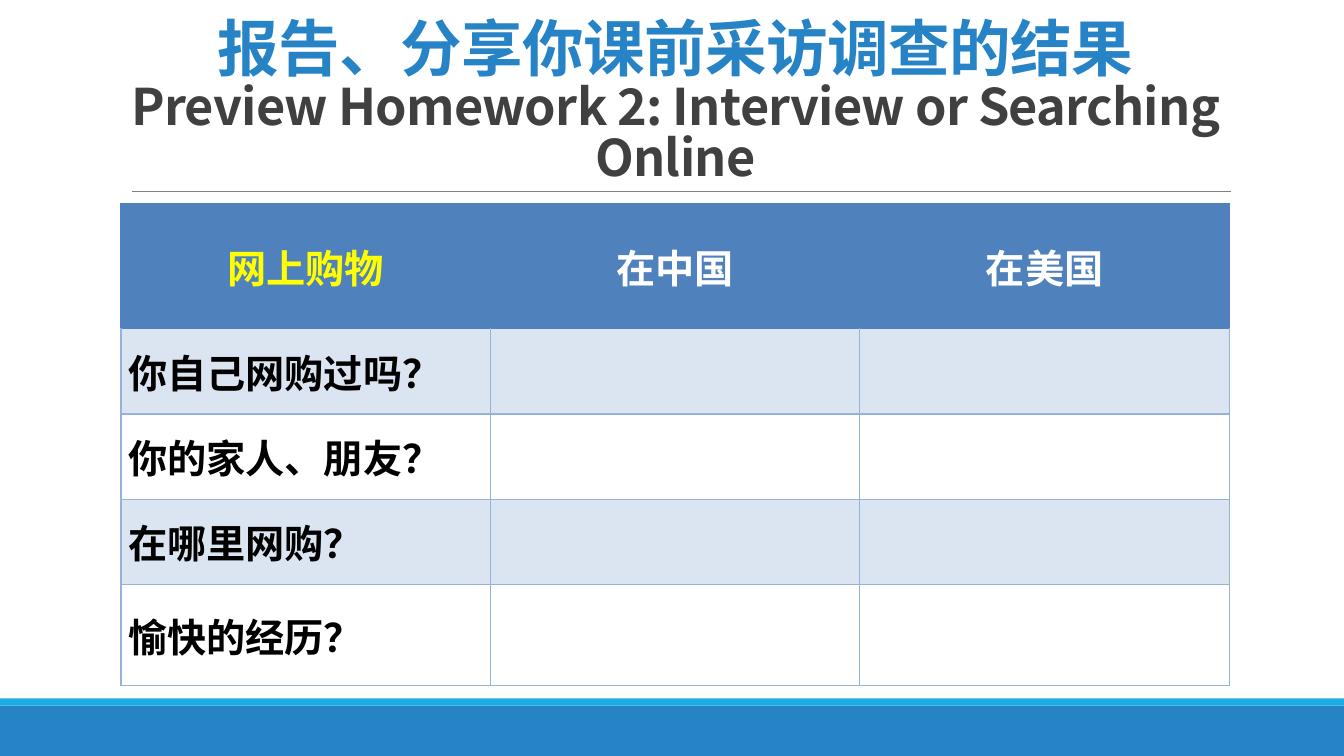
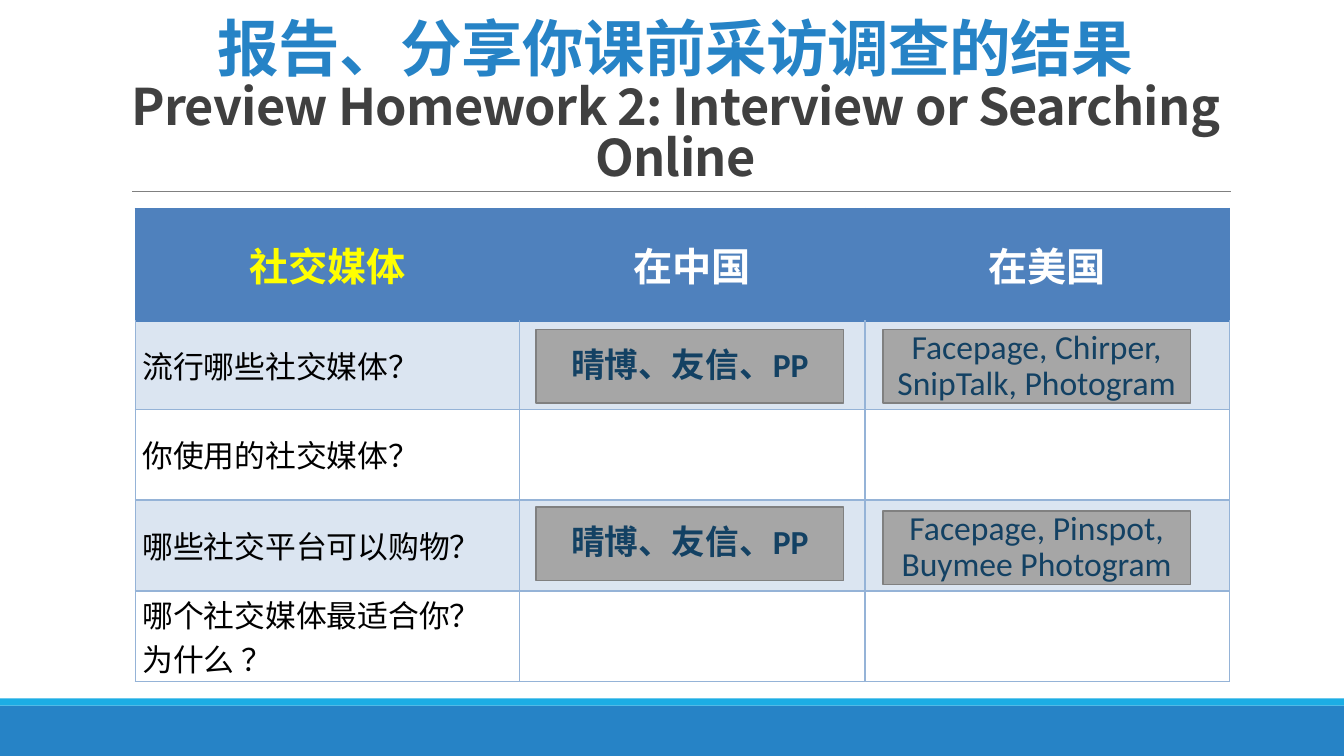
"""Build two slides that report interview results on online shopping and social media."""
from dataclasses import dataclass

from lxml import etree
from pptx import Presentation
from pptx.dml.color import RGBColor
from pptx.enum.shapes import MSO_CONNECTOR, MSO_SHAPE
from pptx.enum.text import MSO_ANCHOR, PP_ALIGN
from pptx.oxml.ns import qn
from pptx.presentation import Presentation as Deck
from pptx.shapes.autoshape import Shape
from pptx.slide import Slide
from pptx.table import _Cell
from pptx.text.text import _Paragraph
from pptx.util import Cm, Pt

RECTANGLE = MSO_SHAPE.RECTANGLE
STRAIGHT = MSO_CONNECTOR.STRAIGHT
MIDDLE, BOTTOM = MSO_ANCHOR.MIDDLE, MSO_ANCHOR.BOTTOM
CENTER, LEFT = PP_ALIGN.CENTER, PP_ALIGN.LEFT
BLANK_LAYOUT = 6


@dataclass(frozen=True)
class Theme:
    blue: str = "2683C6"
    cyan: str = "1CADE4"
    gray: str = "808080"
    dark: str = "404040"
    yellow: str = "FFFF00"
    white: str = "FFFFFF"
    black: str = "000000"
    header: str = "4F81BD"
    band: str = "DBE5F1"
    border: str = "95B3D7"
    answer_fill: str = "A6A6A6"
    answer_text: str = "134163"
    cjk_font: str = "Noto Sans CJK SC"
    table_font: str = "Times New Roman"
    answer_font: str = "Calibri"
    title_size: int = 44
    subtitle_size: int = 36
    header_size: int = 28
    question_size: int = 22
    answer_size: int = 24


@dataclass(frozen=True)
class Answer:
    text: str
    left: float
    top: float
    bold: bool = False


@dataclass(frozen=True)
class Survey:
    topic: str
    questions: tuple[str, ...]
    left: float
    top: float
    columns: tuple[float, ...]
    rows: tuple[float, ...]
    question_size: int
    question_bold: bool
    answers: tuple[Answer, ...] = ()


THEME = Theme()
SLIDE_WIDTH, SLIDE_HEIGHT = 33.87, 19.05
FOOTER_TOP, STRIPE_HEIGHT = 17.78, 0.18
ANSWER_WIDTH, ANSWER_HEIGHT = 7.75, 1.85
CHINA_LEFT, USA_LEFT = 13.51, 22.25
TITLE = "报告、分享你课前采访调查的结果"
SUBTITLE = "Preview Homework 2: Interview or Searching Online"
PLACES = ("在中国", "在美国")
CHINA_APPS = "晴博、友信、PP"

SURVEYS = (
    Survey(
        "网上购物",
        ("你自己网购过吗？", "你的家人、朋友？", "在哪里网购？", "愉快的经历？"),
        3.05, 5.13, (9.31,) * 3, (3.15, 2.15, 2.15, 2.15, 2.54),
        THEME.header_size, True,
    ),
    Survey(
        "社交媒体",
        ("流行哪些社交媒体？", "你使用的社交媒体？", "哪些社交平台可以购物？",
         "哪个社交媒体最适合你？\v为什么 ？"),
        3.41, 5.25, (9.68, 8.71, 9.19), (2.84, 2.22, 2.29, 2.29, 2.29),
        THEME.question_size, False,
        (
            Answer(CHINA_APPS, CHINA_LEFT, 8.31, True),
            Answer("Facepage, Chirper, SnipTalk, Photogram", USA_LEFT, 8.31),
            Answer(CHINA_APPS, CHINA_LEFT, 12.78, True),
            Answer("Facepage, Pinspot, Buymee Photogram", USA_LEFT, 12.88),
        ),
    ),
)


def rgb(color: str) -> RGBColor:
    """Turn a hex string into a colour."""
    return RGBColor.from_string(color)


def style_paragraph(paragraph: _Paragraph, font: str, size: int, color: str,
                    bold: bool, align: PP_ALIGN = CENTER) -> None:
    """Set the paragraph's alignment and its Latin and East Asian fonts."""
    paragraph.alignment = align
    paragraph.font.size = Pt(size)
    paragraph.font.bold = bold
    paragraph.font.color.rgb = rgb(color)
    paragraph.font.name = font
    defaults = paragraph._p.pPr.find(qn("a:defRPr"))
    etree.SubElement(defaults, qn("a:ea")).set("typeface", THEME.cjk_font)


def add_box(slide: Slide, left: float, top: float, width: float, height: float,
            fill: str) -> Shape:
    """Add a flat rectangle without an outline."""
    box = slide.shapes.add_shape(RECTANGLE, Cm(left), Cm(top), Cm(width), Cm(height))
    box.shadow.inherit = False
    box.fill.solid()
    box.fill.fore_color.rgb = rgb(fill)
    box.line.fill.background()
    return box


def add_frame(slide: Slide) -> None:
    """Draw the footer bands and the rule below the title."""
    add_box(slide, 0, FOOTER_TOP, SLIDE_WIDTH, SLIDE_HEIGHT - FOOTER_TOP, THEME.blue)
    add_box(slide, 0, FOOTER_TOP - STRIPE_HEIGHT, SLIDE_WIDTH, STRIPE_HEIGHT, THEME.cyan)
    rule = slide.shapes.add_connector(STRAIGHT, Cm(3.33), Cm(4.83), Cm(31.01), Cm(4.83))
    rule.line.color.rgb = rgb(THEME.gray)
    rule.line.width = Pt(0.5)
    etree.SubElement(rule._element.spPr, qn("a:effectLst"))


def add_title(slide: Slide) -> None:
    """Write the shared two-language title."""
    frame = slide.shapes.add_textbox(Cm(3.05), Cm(0.79), Cm(27.94), Cm(4.04)).text_frame
    frame.word_wrap = True
    frame.vertical_anchor = BOTTOM
    heading = frame.paragraphs[0]
    heading.line_spacing = 0.85
    style_paragraph(heading, THEME.cjk_font, THEME.title_size, THEME.blue, True)
    heading._p.pPr.find(qn("a:defRPr")).set("spc", "-50")
    heading.add_run().text = TITLE
    heading.add_line_break()
    subtitle = heading.add_run()
    subtitle.text = SUBTITLE
    subtitle.font.size = Pt(THEME.subtitle_size)
    subtitle.font.color.rgb = rgb(THEME.dark)


def set_borders(cell: _Cell, color: str, top_color: str) -> None:
    """Outline a cell, with its own colour for the top side."""
    properties = cell._tc.get_or_add_tcPr()
    for position, side in enumerate(("lnL", "lnR", "lnT", "lnB")):
        line = etree.Element(qn(f"a:{side}"), w=str(Pt(1)))
        fill = etree.SubElement(line, qn("a:solidFill"))
        shade = top_color if side == "lnT" else color
        etree.SubElement(fill, qn("a:srgbClr")).set("val", shade)
        properties.insert(position, line)


def format_cell(cell: _Cell, fill: str, border: str, top_border: str) -> None:
    """Give a cell its fill, borders, margins and anchor."""
    cell.fill.solid()
    cell.fill.fore_color.rgb = rgb(fill)
    set_borders(cell, border, top_border)
    cell.vertical_anchor = MIDDLE
    cell.margin_left = cell.margin_right = Cm(0.18)
    cell.margin_top = cell.margin_bottom = 0


def add_survey_table(slide: Slide, survey: Survey) -> None:
    """Draw the survey grid with its header row and questions."""
    grid = slide.shapes.add_table(
        len(survey.rows), len(survey.columns), Cm(survey.left), Cm(survey.top),
        Cm(sum(survey.columns)), Cm(sum(survey.rows))).table
    grid.horz_banding = False
    for column, width in zip(grid.columns, survey.columns):
        column.width = Cm(width)
    for index, height in enumerate(survey.rows):
        grid.rows[index].height = Cm(height)
        fill = THEME.band if index % 2 else THEME.white
        border = THEME.border if index else THEME.header
        top_border = THEME.border if index > 1 else THEME.header
        for cell in grid.rows[index].cells:
            format_cell(cell, fill if index else THEME.header, border, top_border)
    for index, heading in enumerate((survey.topic, *PLACES)):
        cell = grid.cell(0, index)
        cell.text = heading
        style_paragraph(cell.text_frame.paragraphs[0], THEME.table_font,
                        THEME.header_size, THEME.white if index else THEME.yellow, True)
    for index, question in enumerate(survey.questions, start=1):
        cell = grid.cell(index, 0)
        cell.text = question
        style_paragraph(cell.text_frame.paragraphs[0], THEME.table_font,
                        survey.question_size, THEME.black, survey.question_bold, LEFT)


def add_answer(slide: Slide, answer: Answer) -> None:
    """Place a gray answer card on the table."""
    card = add_box(slide, answer.left, answer.top, ANSWER_WIDTH, ANSWER_HEIGHT,
                   THEME.answer_fill)
    card.line.color.rgb = rgb(THEME.gray)
    card.line.width = Pt(1)
    frame = card.text_frame
    frame.word_wrap = True
    frame.vertical_anchor = MIDDLE
    frame.margin_top = frame.margin_bottom = 0
    frame.text = answer.text
    wording = frame.paragraphs[0]
    wording.line_spacing = 0.9
    style_paragraph(wording, THEME.answer_font, THEME.answer_size,
                    THEME.answer_text, answer.bold)


def add_survey_slide(deck: Deck, survey: Survey) -> None:
    """Add one slide with the shared frame and a survey."""
    slide = deck.slides.add_slide(deck.slide_layouts[BLANK_LAYOUT])
    add_frame(slide)
    add_title(slide)
    add_survey_table(slide, survey)
    for answer in survey.answers:
        add_answer(slide, answer)


def main() -> None:
    """Build and save the presentation."""
    deck = Presentation()
    deck.slide_width, deck.slide_height = Cm(SLIDE_WIDTH), Cm(SLIDE_HEIGHT)
    for survey in SURVEYS:
        add_survey_slide(deck, survey)
    deck.save("out.pptx")


if __name__ == "__main__":
    main()
